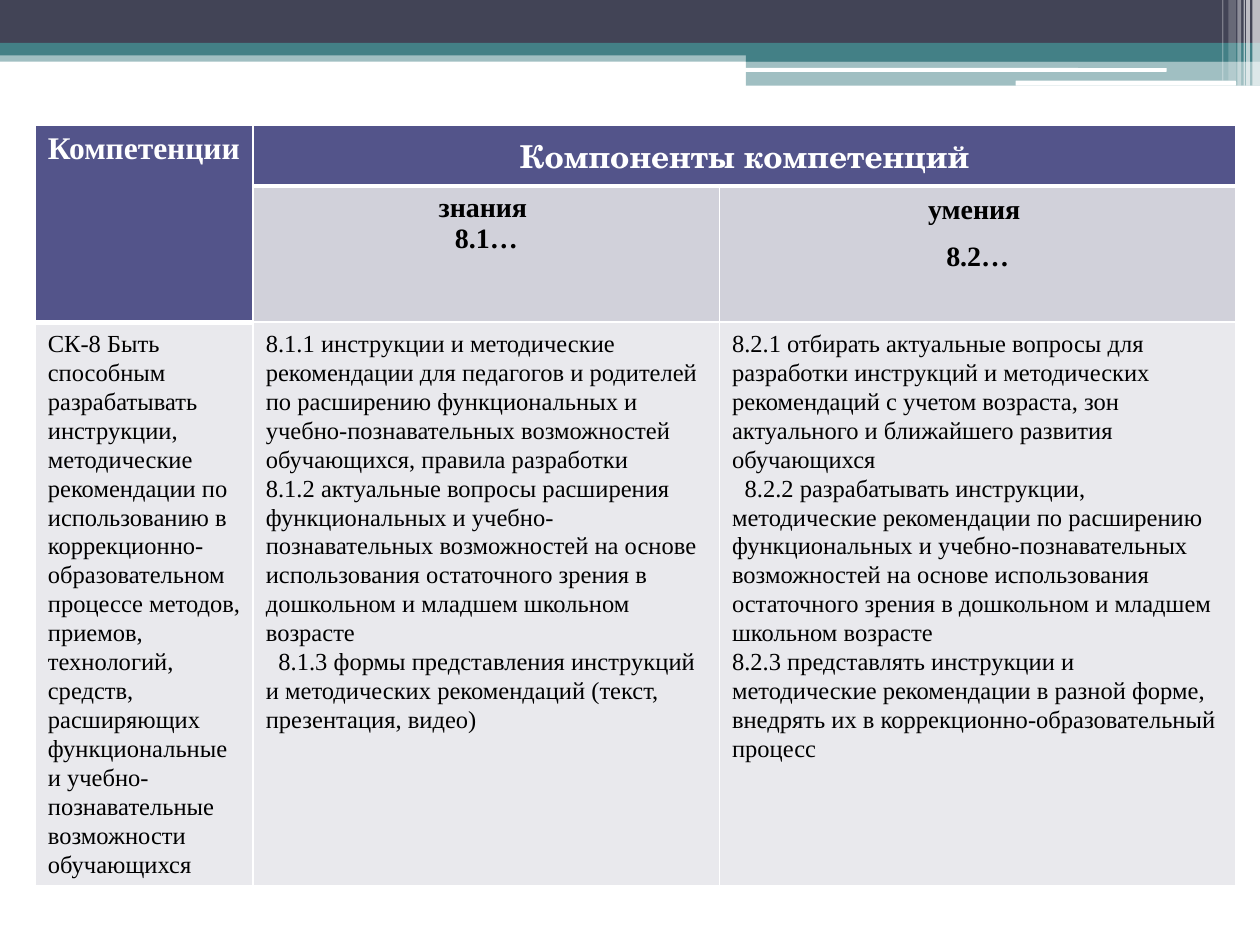
from dataclasses import dataclass
from typing import Optional

from lxml import etree
from pptx import Presentation
from pptx.dml.color import RGBColor
from pptx.enum import shapes, text
from pptx.oxml import ns
from pptx.util import Inches, Pt

WHITE = RGBColor(0xFF, 0xFF, 0xFF)
BLACK = RGBColor(0x00, 0x00, 0x00)
SLATE = RGBColor(0x42, 0x44, 0x56)
TEAL = RGBColor(0x43, 0x80, 0x86)
VIOLET = RGBColor(0x53, 0x54, 0x8A)
LILAC = RGBColor(0xD1, 0xD1, 0xDA)
PALE = RGBColor(0xE9, 0xE9, 0xED)
SERIF = "Times New Roman"
SCHOLA = "TeX Gyre Schola"


@dataclass(frozen=True)
class Band:
    left: float
    top: float
    width: float
    height: float
    color: RGBColor
    opacity: int = 100
    rounded: bool = False


@dataclass(frozen=True)
class CellStyle:
    fill: RGBColor
    size: int
    color: RGBColor = BLACK
    font: str = SERIF
    bold: bool = False
    centered: bool = False
    line_spacing: Optional[float] = None
    space_after: int = 0


@dataclass(frozen=True)
class Entry:
    row: int
    column: int
    paragraphs: tuple[str, ...]
    style: CellStyle
    bottom_border: int = 1
    indented: Optional[int] = None


BANDS = [
    Band(0, 0.4, 10, 0.09, TEAL, 50),
    Band(0, 0, 10, 0.34, SLATE),
    Band(0, 0.34, 10, 0.1, TEAL),
    Band(5.92, 0.39, 4.08, 0.1, TEAL),
    Band(5.92, 0.48, 4.08, 0.2, TEAL, 50),
    Band(5.91, 0.54, 3.35, 0.03, WHITE, rounded=True),
    Band(8.06, 0.64, 1.75, 0.04, WHITE, rounded=True),
    Band(9.94, 0, 0.06, 0.68, WHITE, 65),
    Band(9.89, 0, 0.03, 0.68, WHITE, 65),
    Band(9.87, 0, 0.01, 0.68, WHITE, 60),
    Band(9.82, 0, 0.03, 0.68, WHITE, 40),
    Band(9.75, 0, 0.06, 0.64, WHITE, 20),
    Band(9.7, 0, 0.01, 0.64, WHITE, 30),
]

HEADER = CellStyle(VIOLET, 18, WHITE, bold=True)
GROUP_HEADER = CellStyle(VIOLET, 18, WHITE, SCHOLA, bold=True, centered=True)
KNOWLEDGE_HEADER = CellStyle(LILAC, 16, bold=True, centered=True)
SKILLS_HEADER = CellStyle(LILAC, 16, bold=True, centered=True, line_spacing=1.07, space_after=8)
BODY = CellStyle(PALE, 14, line_spacing=1.07)

COLUMN_WIDTHS = [1.73, 3.7, 4.1]
ROW_HEIGHTS = [0.48, 1.08, 4.47]

ENTRIES = [
    Entry(0, 0, ("Компетенции",), HEADER, bottom_border=3),
    Entry(0, 1, ("Компоненты компетенций",), GROUP_HEADER, bottom_border=3),
    Entry(1, 1, ("знания ", "8.1…"), KNOWLEDGE_HEADER),
    Entry(1, 2, ("умения ", "8.2…"), SKILLS_HEADER),
    Entry(2, 0, (
        "СК-8 Быть способным разрабатывать инструкции, методические рекомендации "
        "по использованию в коррекционно-образовательном процессе методов, приемов, "
        "технологий, средств, расширяющих функциональные и учебно-познавательные "
        "возможности обучающихся",
    ), BODY),
    Entry(2, 1, (
        "8.1.1 инструкции и методические рекомендации для педагогов и родителей "
        "по расширению функциональных и учебно-познавательных возможностей "
        "обучающихся, правила разработки",
        "8.1.2 актуальные вопросы расширения функциональных и "
        "учебно-познавательных возможностей на основе использования остаточного "
        "зрения в дошкольном и младшем школьном возрасте",
        "8.1.3 формы представления инструкций и методических рекомендаций "
        "(текст, презентация, видео)",
    ), BODY, indented=2),
    Entry(2, 2, (
        "8.2.1 отбирать актуальные вопросы для разработки инструкций и "
        "методических рекомендаций с учетом возраста, зон актуального и "
        "ближайшего развития обучающихся",
        "8.2.2 разрабатывать инструкции, методические рекомендации по "
        "расширению функциональных и учебно-познавательных возможностей на "
        "основе использования остаточного зрения в дошкольном и младшем "
        "школьном возрасте",
        "8.2.3 представлять инструкции и методические рекомендации в разной "
        "форме, внедрять их в коррекционно-образовательный процесс",
    ), BODY, indented=1),
]


def draw_band(slide, band: Band) -> None:
    preset = shapes.MSO_SHAPE.ROUNDED_RECTANGLE if band.rounded else shapes.MSO_SHAPE.RECTANGLE
    bar = slide.shapes.add_shape(
        preset, Inches(band.left), Inches(band.top), Inches(band.width), Inches(band.height))
    bar.shadow.inherit = False
    bar.line.fill.background()
    bar.fill.solid()
    bar.fill.fore_color.rgb = band.color
    if band.opacity < 100:
        color = bar.fill._xPr.find(".//" + ns.qn("a:srgbClr"))
        etree.SubElement(color, ns.qn("a:alpha"), val=str(band.opacity * 1000))


def set_borders(cell, bottom: int) -> None:
    properties = cell._tc.get_or_add_tcPr()
    for position, (side, width) in enumerate((("L", 1), ("R", 1), ("T", 1), ("B", bottom))):
        border = etree.Element(ns.qn(f"a:ln{side}"), w=str(Pt(width)))
        fill = etree.SubElement(border, ns.qn("a:solidFill"))
        etree.SubElement(fill, ns.qn("a:srgbClr"), val=str(WHITE))
        properties.insert(position, border)


def fill_cell(cell, entry: Entry) -> None:
    style = entry.style
    cell.fill.solid()
    cell.fill.fore_color.rgb = style.fill
    cell.text_frame.text = "\n".join(entry.paragraphs)
    for index, paragraph in enumerate(cell.text_frame.paragraphs):
        paragraph.alignment = text.PP_ALIGN.CENTER if style.centered else text.PP_ALIGN.LEFT
        paragraph.space_after = Pt(style.space_after)
        if style.line_spacing:
            paragraph.line_spacing = style.line_spacing
        if index == entry.indented:
            paragraph._p.get_or_add_pPr().set("indent", str(Inches(0.1)))
        for run in paragraph.runs:
            run.font.name = style.font
            run.font.size = Pt(style.size)
            run.font.bold = style.bold
            run.font.color.rgb = style.color
    set_borders(cell, entry.bottom_border)


def draw_competence_table(slide) -> None:
    table = slide.shapes.add_table(
        len(ROW_HEIGHTS), len(COLUMN_WIDTHS), Inches(0.28), Inches(0.99),
        Inches(sum(COLUMN_WIDTHS)), Inches(sum(ROW_HEIGHTS))).table
    for column, width in zip(table.columns, COLUMN_WIDTHS):
        column.width = Inches(width)
    for row, height in zip(table.rows, ROW_HEIGHTS):
        row.height = Inches(height)
    table.cell(0, 0).merge(table.cell(1, 0))
    table.cell(0, 1).merge(table.cell(0, 2))
    for entry in ENTRIES:
        fill_cell(table.cell(entry.row, entry.column), entry)
    for row, column in ((1, 0), (0, 2)):
        set_borders(table.cell(row, column), 3)


def main() -> None:
    presentation = Presentation()
    presentation.slide_width = Inches(10)
    presentation.slide_height = Inches(7.5)
    slide = presentation.slides.add_slide(presentation.slide_layouts[6])
    for band in BANDS:
        draw_band(slide, band)
    draw_competence_table(slide)
    presentation.save("out.pptx")


if __name__ == "__main__":
    main()
